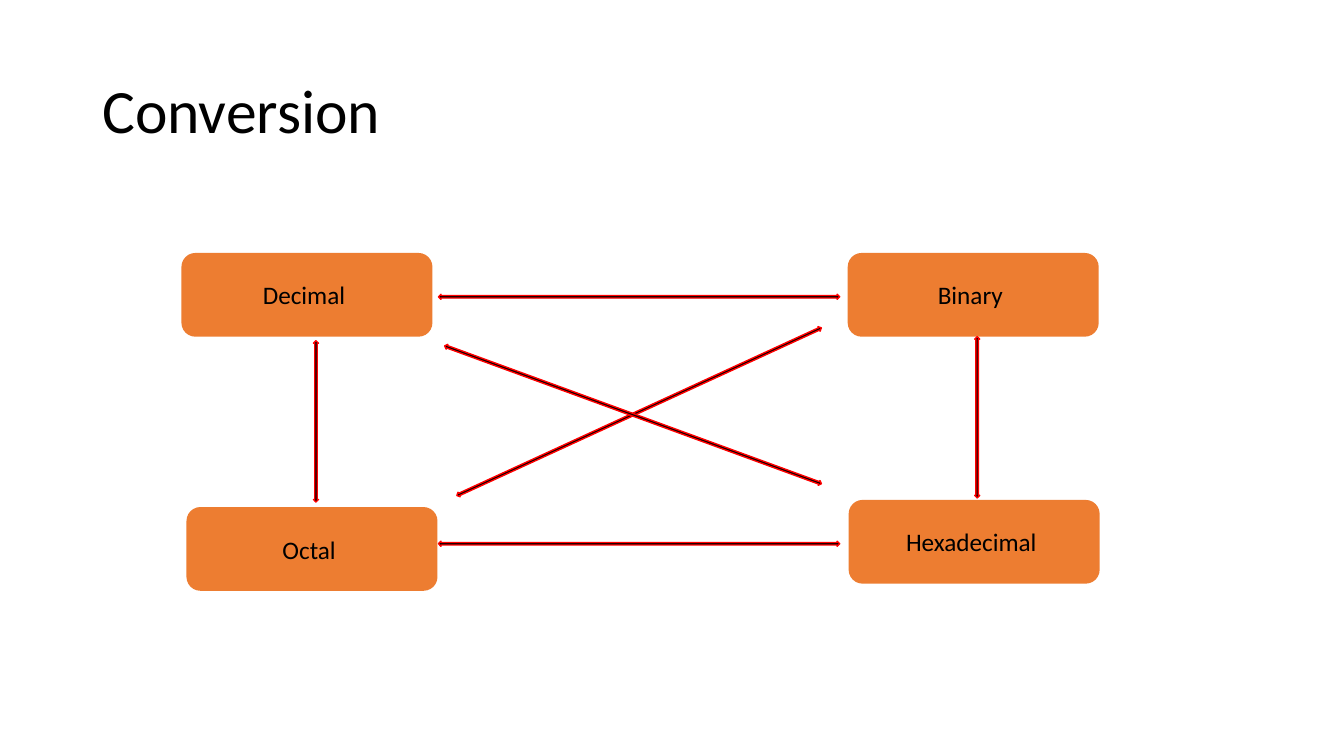
import pptx
import pptx.util
import pptx.dml.color
import pptx.enum.shapes
import pptx.enum.text

Pt = pptx.util.Pt
Shapes = pptx.enum.shapes.MSO_SHAPE
Align = pptx.enum.text.PP_ALIGN


def color(hex_string):
    return pptx.dml.color.RGBColor.from_string(hex_string)


def write(shape, text, size, paragraph_format):
    """Put one black, vertically centred paragraph into the shape."""
    shape.text_frame.word_wrap = True
    shape.text_frame.vertical_anchor = pptx.enum.text.MSO_ANCHOR.MIDDLE
    paragraph = shape.text_frame.paragraphs[0]
    for name, value in paragraph_format.items():
        setattr(paragraph, name, value)
    run = paragraph.add_run()
    run.text = text
    for name, value in {"name": "Calibri", "size": Pt(size)}.items():
        setattr(run.font, name, value)
    run.font.color.rgb = color("000000")


presentation = pptx.Presentation()
presentation.slide_width = Pt(960)
presentation.slide_height = Pt(540)
slide = presentation.slides.add_slide(presentation.slide_layouts[6])

title = slide.shapes.add_textbox(Pt(66), Pt(28.8), Pt(828), Pt(104.4))
write(title, "Conversion", 44, {"line_spacing": 0.9})

# Number systems: label, left, top
number_systems = [
    ("Decimal ", 129.6, 180.7),
    ("Octal ", 133.2, 362.2),
    ("Binary ", 605.5, 180.7),
    ("Hexadecimal ", 606.2, 357.1),
]
for label, left, top in number_systems:
    box = slide.shapes.add_shape(
        Shapes.ROUNDED_RECTANGLE, Pt(left), Pt(top), Pt(179.3), Pt(59.8))
    box.shadow.inherit = False
    box.fill.solid()
    box.fill.fore_color.rgb = color("ED7D31")
    box.line.fill.background()
    write(box, label, 18, {"alignment": Align.CENTER})

# Double arrows: preset, left, top, rotation
THICKNESS = 3.6
arrow_sizes = {
    Shapes.UP_DOWN_ARROW: (THICKNESS, 115.2),
    Shapes.LEFT_RIGHT_ARROW: (286.6, THICKNESS),
}
conversions = [
    (Shapes.UP_DOWN_ARROW, 223.9, 243.4, 0),
    (Shapes.LEFT_RIGHT_ARROW, 313.2, 210.2, 0),
    (Shapes.LEFT_RIGHT_ARROW, 313.2, 386.6, 0),
    (Shapes.UP_DOWN_ARROW, 696.2, 240.5, 0),
    (Shapes.LEFT_RIGHT_ARROW, 313.2, 292.3, 335.3),
    (Shapes.LEFT_RIGHT_ARROW, 308.9, 294.5, 200.1),
]
for preset, left, top, rotation in conversions:
    width, height = arrow_sizes[preset]
    arrow = slide.shapes.add_shape(preset, Pt(left), Pt(top), Pt(width), Pt(height))
    arrow.rotation = rotation
    arrow.shadow.inherit = False
    arrow.fill.solid()
    arrow.fill.fore_color.rgb = color("000000")
    arrow.line.color.rgb = color("FF0000")
    arrow.line.width = Pt(1)

presentation.save("out.pptx")
